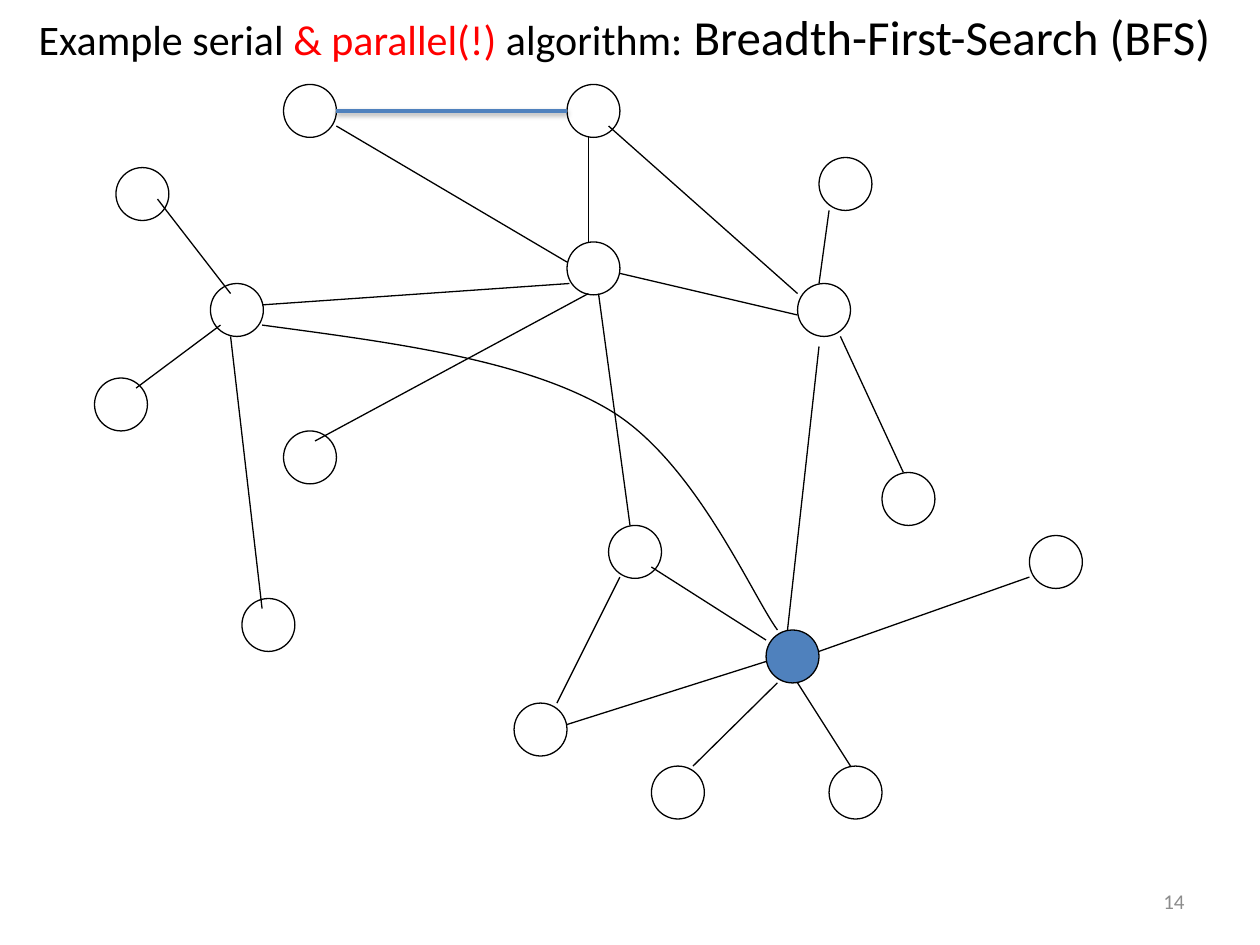
import pptx
import pptx.util
import pptx.dml.color
import pptx.enum.shapes
import pptx.enum.text
import pptx.oxml
import pptx.oxml.ns

Inches = pptx.util.Inches
Pt = pptx.util.Pt
qn = pptx.oxml.ns.qn


def color(value):
    return pptx.dml.color.RGBColor.from_string(value)


def add_edge(x1, y1, x2, y2, value="000000", width=0.75):
    s = shapes.add_connector(
        pptx.enum.shapes.MSO_CONNECTOR.STRAIGHT,
        Inches(x1), Inches(y1), Inches(x2), Inches(y2))
    s.line.color.rgb = color(value)
    s.line.width = Pt(width)
    effects = pptx.oxml.parse_xml(
        '<a:effectLst xmlns:a="http://schemas.openxmlformats.org/drawingml/2006/main"/>')
    s._element.spPr.append(effects)
    return effects


prs = pptx.Presentation()
prs.slide_width = Inches(10)
prs.slide_height = Inches(7.5)
shapes = prs.slides.add_slide(prs.slide_layouts[6]).shapes

node_size = 0.42
start_node = (6.08, 5)
nodes = [
    (0.92, 1.33), (1.67, 2.25), (2.25, 0.67), (6.5, 1.25), (1.92, 4.75), (4.5, 1.92),
    (4.5, 0.67), (8.17, 4.25), (4.08, 5.58), (4.83, 4.17), (2.25, 3.42), (0.75, 3),
    (6.33, 2.25), start_node, (7, 3.75), (5.17, 6.08), (6.58, 6.08),
]
for x, y in nodes:
    s = shapes.add_shape(
        pptx.enum.shapes.MSO_SHAPE.OVAL,
        Inches(x), Inches(y), Inches(node_size), Inches(node_size))
    s.shadow.inherit = False
    s.line.color.rgb = color("000000")
    s.line.width = Pt(0.75)
    if (x, y) == start_node:
        s.fill.solid()
        s.fill.fore_color.rgb = color("4F81BD")
    else:
        s.fill.background()

edges = [
    (6.5, 2.75, 6.25, 5), (6.5, 2.25, 6.58, 1.67), (4.92, 2.17, 6.33, 2.5),
    (6.67, 2.67, 7.17, 3.75), (6.5, 5.17, 8.17, 4.58), (6.33, 5.42, 6.75, 6.08),
    (6.17, 5.42, 5.5, 6.08), (4.5, 5.75, 6.08, 5.25), (5.17, 4.5, 6.08, 5.08),
    (1.83, 2.67, 2.08, 4.83), (2.08, 2.42, 4.52, 2.25), (1.25, 1.58, 1.83, 2.33),
    (1.75, 2.58, 1.08, 3.08), (4.67, 2.33, 2.5, 3.5), (2.67, 1, 4.5, 2.08),
    (4.83, 1, 6.33, 2.33), (4.67, 1.08, 4.67, 1.92), (4.75, 2.33, 5, 4.17),
    (4.92, 4.58, 4.42, 5.58),
]
for edge in edges:
    add_edge(*edge)

curve = [(3.12, 2.72), (4.15, 2.85), (4.83, 3.25), (5.51, 3.65), (5.96, 4.71), (6.17, 5)]
builder = shapes.build_freeform(Inches(2.08), Inches(2.58))
builder.add_line_segments([(Inches(x), Inches(y)) for x, y in curve], close=False)
s = builder.convert_to_shape()
s.shadow.inherit = False
s.fill.background()
s.line.color.rgb = color("000000")
s.line.width = Pt(0.75)
segments = list(s._element.iter(qn("a:lnTo")))
for i in range(0, len(segments), 3):
    bezier = segments[i].makeelement(qn("a:cubicBezTo"))
    segments[i].addprevious(bezier)
    for segment in segments[i:i + 3]:
        bezier.append(segment[0])
        segment.getparent().remove(segment)

s = shapes.add_textbox(Inches(0), Inches(0), Inches(10), Inches(0.57))
tf = s.text_frame
tf.word_wrap = True
tf.auto_size = pptx.enum.text.MSO_AUTO_SIZE.SHAPE_TO_FIT_TEXT
p = tf.paragraphs[0]
p.alignment = pptx.enum.text.PP_ALIGN.CENTER
p.font.name = "Calibri"
for text, size, value in [
    ("Example serial ", 24, "000000"),
    ("& parallel(!)", 24, "FF0000"),
    (" algorithm:", 24, "000000"),
    (" Breadth-First-Search (BFS) ", 28, "000000"),
]:
    r = p.add_run()
    r.text = text
    r.font.size = Pt(size)
    r.font.color.rgb = color(value)

s = shapes.add_textbox(Inches(7.17), Inches(6.95), Inches(2.33), Inches(0.4))
tf = s.text_frame
tf.word_wrap = True
tf.vertical_anchor = pptx.enum.text.MSO_ANCHOR.MIDDLE
p = tf.paragraphs[0]
p.text = "14"
p.alignment = pptx.enum.text.PP_ALIGN.RIGHT
p.font.name = "Calibri"
p.font.size = Pt(12)
p.font.color.rgb = color("8C8C8C")

effects = add_edge(4.5, 0.88, 2.67, 0.88, "4F81BD", 2)
effects.append(pptx.oxml.parse_xml(
    '<a:outerShdw xmlns:a="http://schemas.openxmlformats.org/drawingml/2006/main"'
    f' blurRad="{Pt(3.1)}" dist="{Pt(1.6)}" dir="5400000" rotWithShape="0">'
    '<a:srgbClr val="000000"><a:alpha val="38000"/></a:srgbClr></a:outerShdw>'))

prs.save("out.pptx")
